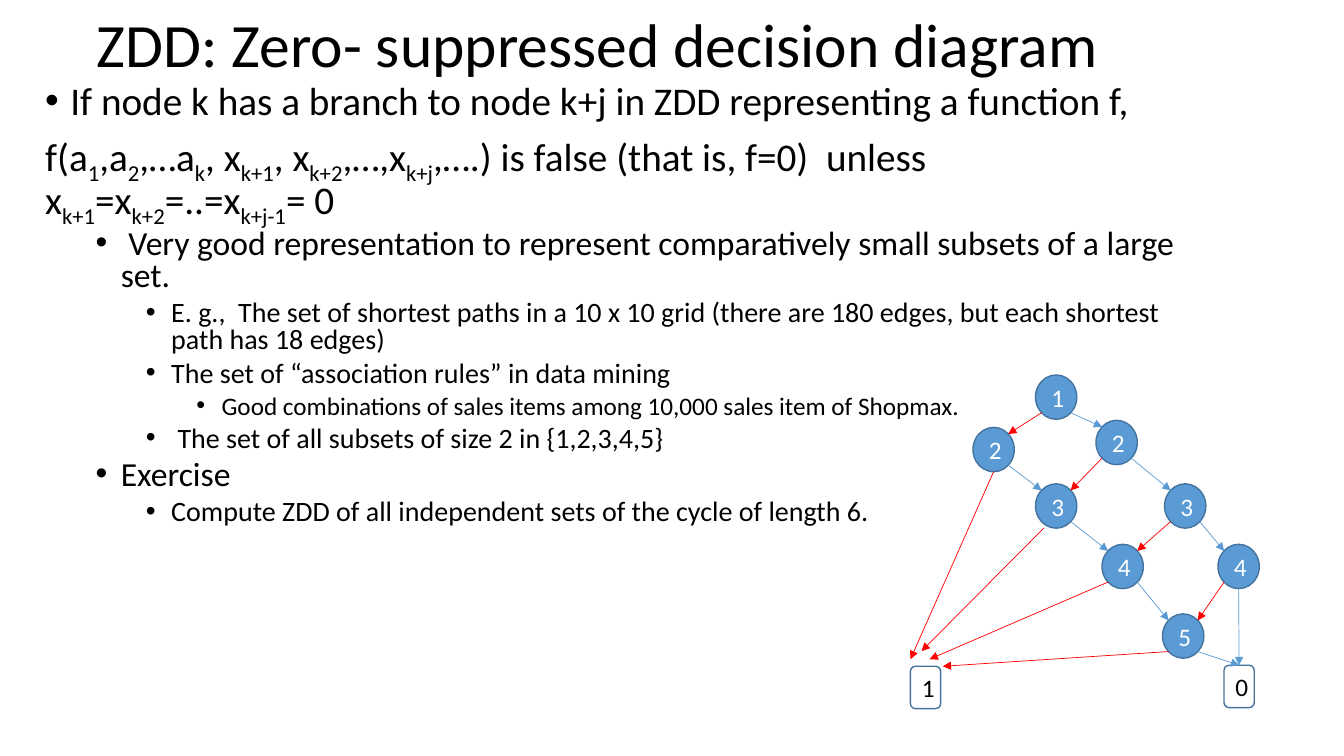
import pptx
import pptx.util
import pptx.dml.color
import pptx.enum.shapes
import pptx.enum.text
import pptx.oxml
import pptx.oxml.ns
from pptx.util import Inches

COLORS = {"black": "000000", "white": "FFFFFF", "blue": "5B9BD5",
          "outline": "43739E", "red": "FF0000"}
FONT = "Calibri"
NODE_W, NODE_H = 0.41, 0.44
SINK_W, SINK_H = 0.3, 0.42

# Outline level -> text size and space before
LEVELS = {0: (28, 10), 1: (24, 5), 2: (20, 5), 3: (18, 5)}

# Level, bulleted, text; every second part between bars is a subscript
BODY = [
    (0, True, "If node k has a branch to node k+j in ZDD representing a function f,"),
    (0, False, "f(a|1|,a|2|,…a|k|, x|k+1|, x|k+2|,…,x|k+j|,….) is false "
               "(that is, f=0)  unless x|k+1|=x|k+2|=..=x|k+j-1|= 0"),
    (1, True, " Very good representation to represent comparatively small "
              "subsets of a large set."),
    (2, True, "E. g.,  The set of shortest paths in a 10 x 10 grid (there are "
              "180 edges, but each shortest path has 18 edges)"),
    (2, True, "The set of “association rules” in data mining"),
    (3, True, "Good combinations of sales items among 10,000 sales item of Shopmax."),
    (2, True, " The set of all subsets of size 2 in {1,2,3,4,5}"),
    (1, True, "Exercise"),
    (2, True, "Compute ZDD of all independent sets of the cycle of length 6."),
]

# Decision nodes: left, top, label
NODES = {
    "1": (10.27, 3.72, "1"),
    "2a": (9.65, 4.24, "2"), "2b": (10.87, 4.17, "2"),
    "3a": (10.27, 4.8, "3"), "3b": (11.55, 4.8, "3"),
    "4a": (10.93, 5.4, "4"), "4b": (12.08, 5.4, "4"),
    "5": (11.53, 6.09, "5"),
}
SINKS = {"1": (9.03, 6.61), "0": (12.14, 6.6)}

# Branches between nodes, then branches to the sinks
LOW = [("1", "2a"), ("2b", "3a"), ("3b", "4a"), ("4b", "5")]
HIGH = [("1", "2b"), ("2b", "3b"), ("3b", "4b"),
        ("2a", "3a"), ("3a", "4a"), ("4a", "5")]
TO_ONE = [("2a", 0.5, 1, (9.03, 6.54)), ("3a", 0.2, 1, (9.14, 6.46)),
          ("4a", 0.15, 0.85, (9.22, 6.54)), ("5", 0.15, 0.85, (9.35, 6.61))]
TO_ZERO = [("4b", 0.5, 1), ("5", 0.85, 0.85)]


def rgb(name):
    return pptx.dml.color.RGBColor.from_string(COLORS[name])


def style_run(r, size, color):
    r.font.name = FONT
    r.font.size = pptx.util.Pt(size)
    r.font.color.rgb = rgb(color)


def add_title(s, text):
    sp = s.shapes.title
    sp.left, sp.top = Inches(0.72), Inches(-0.25)
    sp.width, sp.height = Inches(11.5), Inches(1.45)
    tf = sp.text_frame
    tf.text = text
    tf.vertical_anchor = pptx.enum.text.MSO_ANCHOR.MIDDLE
    p = tf.paragraphs[0]
    p.alignment = pptx.enum.text.PP_ALIGN.LEFT
    p.line_spacing = 0.9
    style_run(p.runs[0], 44, "black")


def add_bullet(p, level):
    pPr = p._p.get_or_add_pPr()
    pPr.set("marL", str(Inches(0.25 + 0.5 * level)))
    pPr.set("indent", str(Inches(-0.25)))
    ns = pptx.oxml.ns.nsdecls("a")
    pPr.append(pptx.oxml.parse_xml(f'<a:buFont {ns} typeface="Arial"/>'))
    pPr.append(pptx.oxml.parse_xml(f'<a:buChar {ns} char="•"/>'))


def add_body(s):
    tf = s.shapes.add_textbox(Inches(0.35), Inches(0.8),
                              Inches(11.5), Inches(4.76)).text_frame
    tf.word_wrap = True
    for i, (level, bulleted, text) in enumerate(BODY):
        p = tf.add_paragraph() if i else tf.paragraphs[0]
        size, before = LEVELS[level]
        p.level = level
        p.line_spacing = 0.8
        p.space_before = pptx.util.Pt(before)
        if bulleted:
            add_bullet(p, level)
        for j, part in enumerate(text.split("|")):
            r = p.add_run()
            r.text = part
            style_run(r, size, "black")
            if j % 2:
                r.font._element.set("baseline", "-25000")


def add_node(s, kind, box, label, fill, color):
    sp = s.shapes.add_shape(kind, *map(Inches, box))
    sp.shadow.inherit = False
    sp.fill.solid()
    sp.fill.fore_color.rgb = rgb(fill)
    sp.line.color.rgb = rgb("outline")
    sp.line.width = pptx.util.Pt(1)
    tf = sp.text_frame
    tf.text = label
    tf.word_wrap = True
    tf.vertical_anchor = pptx.enum.text.MSO_ANCHOR.MIDDLE
    p = tf.paragraphs[0]
    p.alignment = pptx.enum.text.PP_ALIGN.CENTER
    style_run(p.runs[0], 18, color)


def node_point(name, fx, fy):
    """Point at the given fractions of a node's width and height."""
    x, y, _ = NODES[name]
    return x + fx * NODE_W, y + fy * NODE_H


def add_arrow(s, start, end, color):
    line = s.shapes.add_connector(pptx.enum.shapes.MSO_CONNECTOR.STRAIGHT,
                                  *map(Inches, start + end))
    line.line.color.rgb = rgb(color)
    line.line.width = pptx.util.Pt(0.5)
    ns = pptx.oxml.ns.nsdecls("a")
    line.line._get_or_add_ln().append(
        pptx.oxml.parse_xml(f'<a:tailEnd {ns} type="triangle"/>'))
    line._element.spPr.append(pptx.oxml.parse_xml(f"<a:effectLst {ns}/>"))


def add_diagram(s):
    shapes = pptx.enum.shapes.MSO_SHAPE
    for x, y, label in NODES.values():
        add_node(s, shapes.OVAL, (x, y, NODE_W, NODE_H), label, "blue", "white")
    for label, (x, y) in SINKS.items():
        add_node(s, shapes.ROUNDED_RECTANGLE, (x, y, SINK_W, SINK_H),
                 label, "white", "black")

    # Low branches go down left, high branches down right
    for a, b in LOW:
        add_arrow(s, node_point(a, 0.15, 0.85), node_point(b, 0.85, 0.15), "red")
    for a, b in HIGH:
        add_arrow(s, node_point(a, 0.85, 0.85), node_point(b, 0.15, 0.15), "blue")

    # Branches to the sinks
    for a, fx, fy, end in TO_ONE:
        add_arrow(s, node_point(a, fx, fy), end, "red")
    x, y = SINKS["0"]
    for a, fx, fy in TO_ZERO:
        add_arrow(s, node_point(a, fx, fy), (x + SINK_W / 2, y), "blue")


def main():
    prs = pptx.Presentation()
    prs.slide_width, prs.slide_height = Inches(13.33), Inches(7.5)
    s = prs.slides.add_slide(prs.slide_layouts[5])
    add_title(s, " ZDD: Zero- suppressed decision diagram")
    add_body(s)
    add_diagram(s)
    prs.save("out.pptx")


if __name__ == "__main__":
    main()
